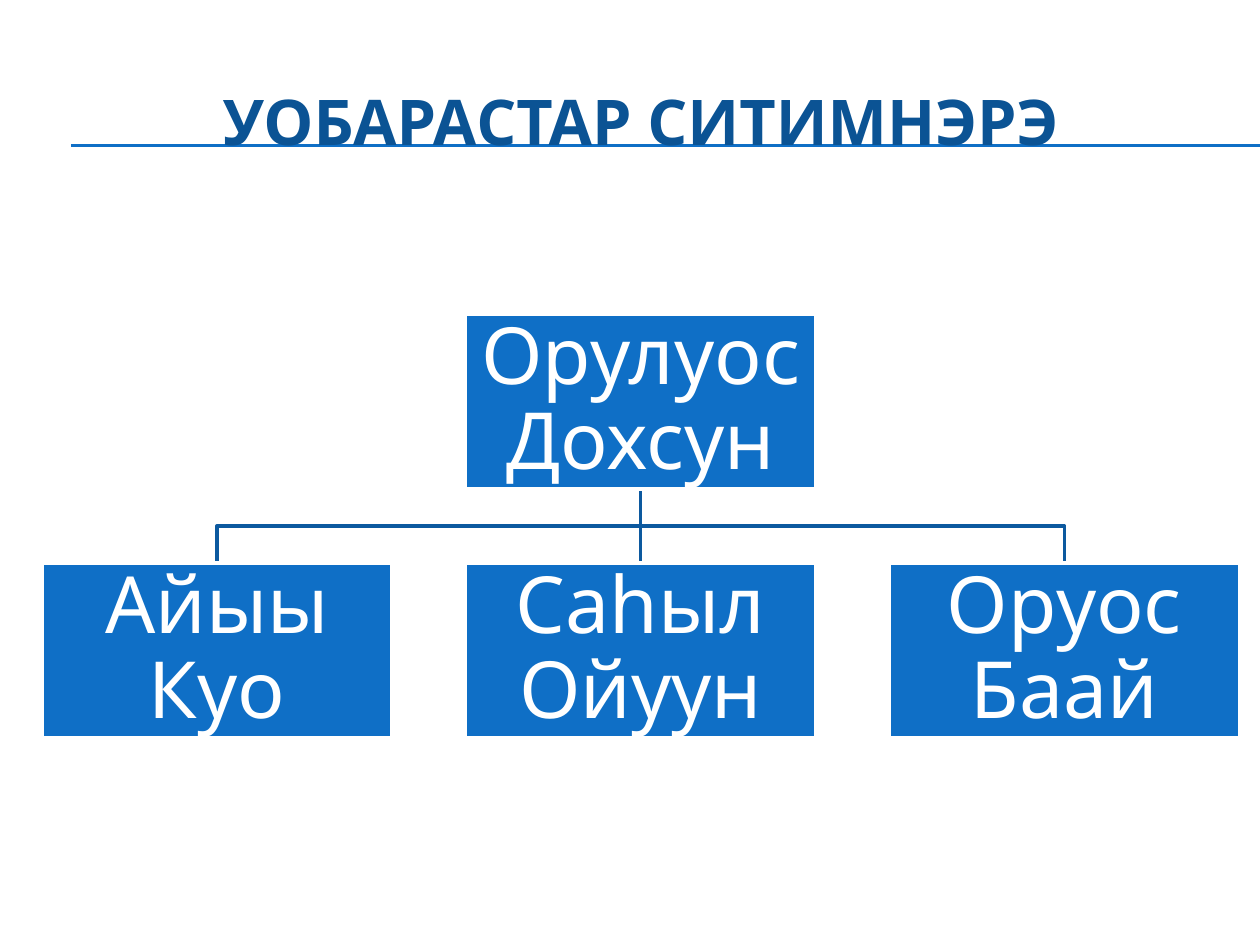
"""Build the slide with the organisation chart of story characters."""
from lxml.etree import SubElement
from pptx import Presentation
from pptx.dml.color import RGBColor
from pptx.enum.shapes import MSO_CONNECTOR as Connector, MSO_SHAPE as Shape
from pptx.enum.text import MSO_ANCHOR as Anchor, PP_ALIGN as Align
from pptx.oxml.ns import qn
from pptx.util import Pt

BLUE = RGBColor(0x0F, 0x6F, 0xC6)
TITLE_BLUE = RGBColor(0x0B, 0x53, 0x94)
LINK_BLUE = RGBColor(0x0C, 0x59, 0x9F)
WHITE = RGBColor(0xFF, 0xFF, 0xFF)
FONT = "Karla"

BOX_WIDTH, BOX_HEIGHT = 200, 100
LEFT, STEP = 24, 242.1
PARENT_TOP, CHILD_TOP = 179.4, 321.7
PARENT_BOTTOM = PARENT_TOP + BOX_HEIGHT
BRANCH_Y = (PARENT_BOTTOM + CHILD_TOP) / 2
LEFT_X, MIDDLE_X, RIGHT_X = [LEFT + i * STEP + BOX_WIDTH / 2 for i in range(3)]

deck = Presentation()
deck.slide_width, deck.slide_height = Pt(720), Pt(540)
slide = deck.slides.add_slide(deck.slide_layouts[5])
shapes = slide.shapes


def add_line(start, end, color, width):
    line = shapes.add_connector(Connector.STRAIGHT, *map(Pt, start + end))
    line.line.color.rgb = color
    line.line.width = Pt(width)
    SubElement(line.element.spPr, qn("a:effectLst"))
    return line


title = shapes.title
title.left, title.top, title.width, title.height = Pt(24), Pt(36), Pt(684), Pt(66)
title.text_frame.text = "УОБАРАСТАР СИТИМНЭРЭ"
title.text_frame.vertical_anchor = Anchor.MIDDLE
para = title.text_frame.paragraphs[0]
para.alignment = Align.CENTER
para.font.name, para.font.size, para.font.bold = FONT, Pt(36), True
para.font.color.rgb = TITLE_BLUE

for rule_y in (82.8, 83.5):
    rule = add_line((40.5, rule_y), (720, rule_y), BLUE, 0.75)
    title.element.addprevious(rule.element)

for child_x in (LEFT_X, RIGHT_X):
    builder = shapes.build_freeform(Pt(MIDDLE_X), Pt(PARENT_BOTTOM))
    corners = [(MIDDLE_X, BRANCH_Y), (child_x, BRANCH_Y), (child_x, CHILD_TOP)]
    builder.add_line_segments([(Pt(x), Pt(y)) for x, y in corners], close=False)
    branch = builder.convert_to_shape()
    branch.shadow.inherit = False
    branch.fill.background()
    branch.line.color.rgb = LINK_BLUE
    branch.line.width = Pt(2)
add_line((MIDDLE_X, PARENT_BOTTOM), (MIDDLE_X, CHILD_TOP), LINK_BLUE, 2)

characters = [
    ("Орулуос Дохсун", 1, PARENT_TOP),
    ("Айыы Куо", 0, CHILD_TOP),
    ("Саһыл Ойуун", 1, CHILD_TOP),
    ("Оруос Баай", 2, CHILD_TOP),
]
for name, column, top in characters:
    box = shapes.add_shape(Shape.RECTANGLE, Pt(LEFT + column * STEP), Pt(top),
                           Pt(BOX_WIDTH), Pt(BOX_HEIGHT))
    box.shadow.inherit = False
    box.fill.solid()
    box.fill.fore_color.rgb = BLUE
    box.line.color.rgb = WHITE
    box.line.width = Pt(2)
    frame = box.text_frame
    frame.text = name
    frame.word_wrap = True
    frame.vertical_anchor = Anchor.MIDDLE
    frame.margin_left = frame.margin_right = Pt(2)
    frame.margin_top = frame.margin_bottom = Pt(2)
    para = frame.paragraphs[0]
    para.alignment = Align.CENTER
    para.line_spacing = 0.9
    para.font.name, para.font.size = FONT, Pt(45)
    para.font.color.rgb = WHITE

deck.save("out.pptx")
